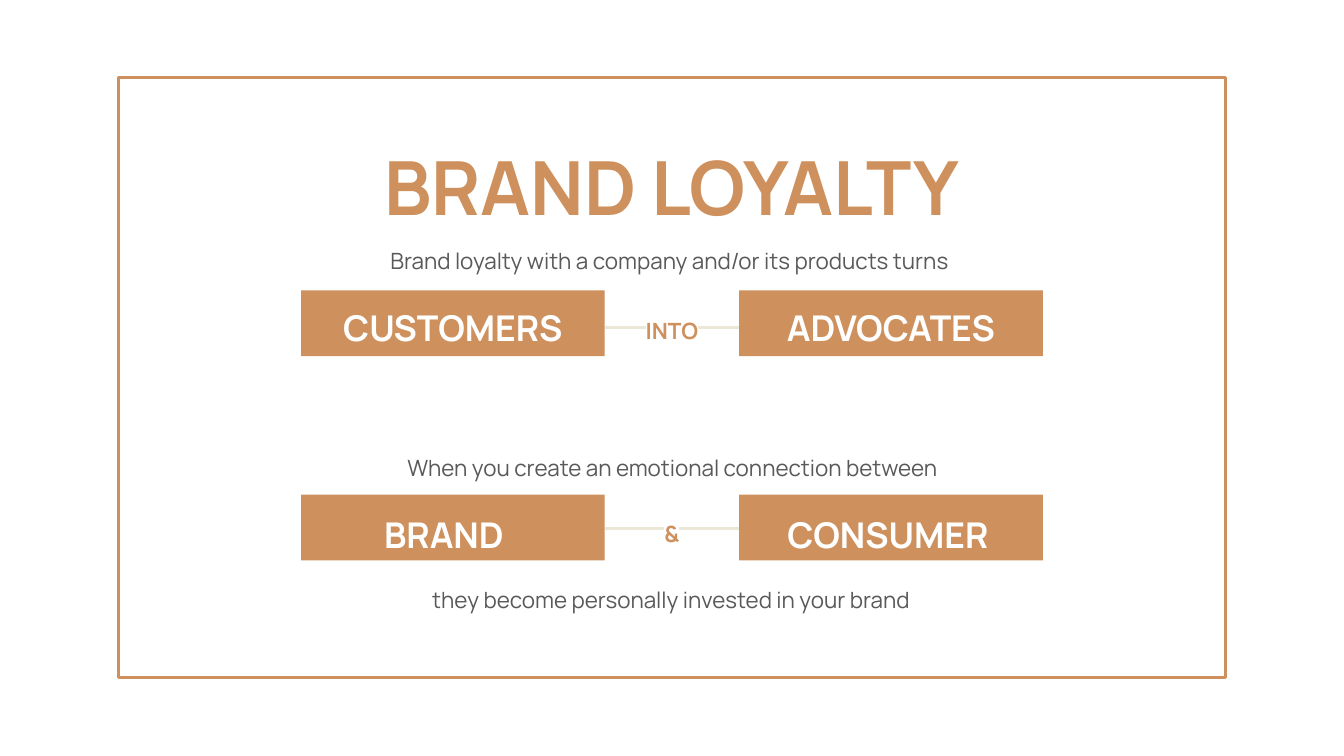
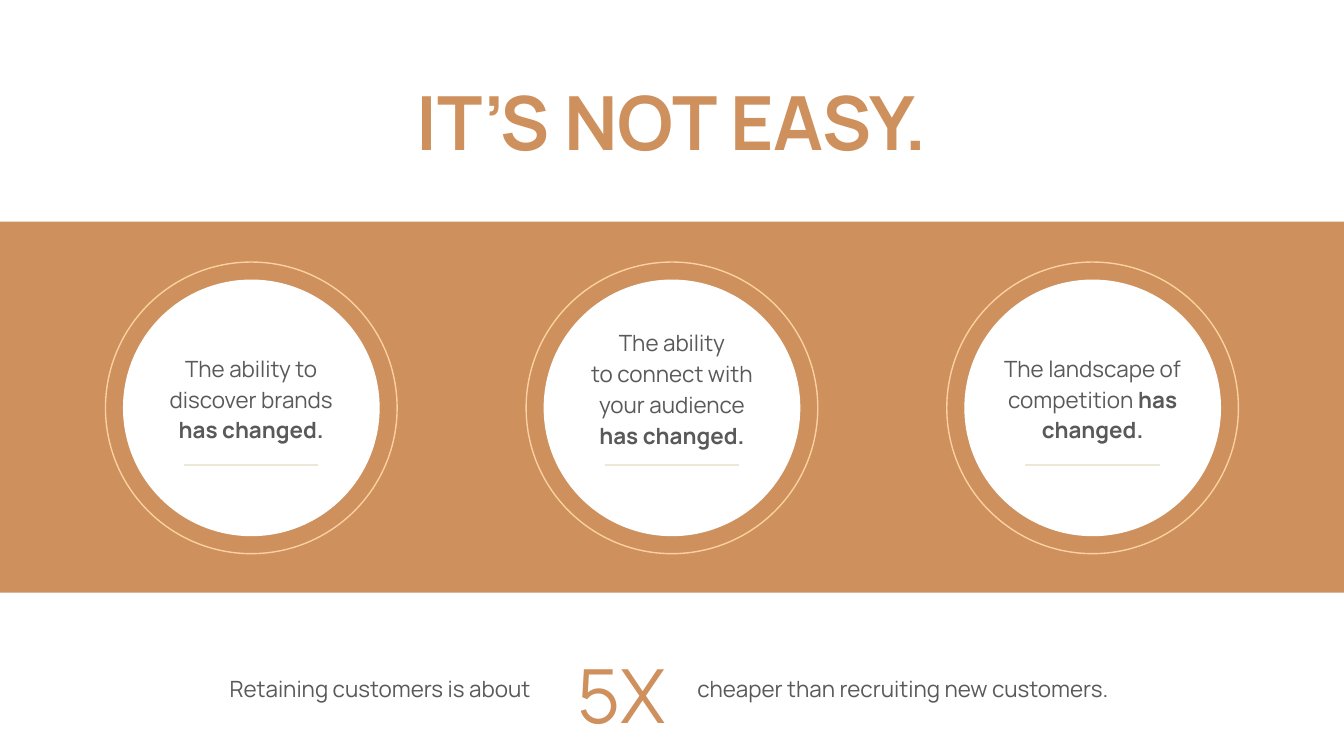
from lxml import etree
from pptx import Presentation
from pptx import util as u
from pptx.dml import color
from pptx.enum import shapes, text
from pptx.oxml import ns

COLUMNS, ROWS = 100, 56.25
COPPER, CREAM, PEACH = "CE905D", "EBE8D8", "FCD1A1"
GREY, WHITE = "595959", "FFFFFF"
LEFT, CENTER = text.PP_ALIGN.LEFT, text.PP_ALIGN.CENTER
RECTANGLE, OVAL = shapes.MSO_SHAPE.RECTANGLE, shapes.MSO_SHAPE.OVAL


def rgb(value):
    return color.RGBColor.from_string(value)


class Board:
    font = "Manrope"

    def __init__(self):
        self.deck = Presentation()
        self.deck.slide_width = u.Inches(10)
        self.deck.slide_height = u.Inches(5.625)
        self.slide = None

    def across(self, columns):
        return round(self.deck.slide_width * columns / COLUMNS)

    def down(self, rows):
        return round(self.deck.slide_height * rows / ROWS)

    def place(self, left, top, width, height):
        return self.across(left), self.down(top), self.across(width), self.down(height)

    def add_slide(self, title, area, spacing):
        self.slide = self.deck.slides.add_slide(self.deck.slide_layouts[5])
        box = self.slide.shapes.title
        box.left, box.top, box.width, box.height = self.place(*area)
        self.fill_text(box, [title], 40, COPPER, True, CENTER, spacing)

    def fill_text(self, box, lines, size, ink, bold, align, spacing):
        frame = box.text_frame
        frame.word_wrap = True
        frame.auto_size = text.MSO_AUTO_SIZE.NONE
        frame.vertical_anchor = text.MSO_ANCHOR.TOP
        frame.margin_left = frame.margin_right = u.Inches(0.1)
        frame.margin_top = frame.margin_bottom = u.Inches(0.1)
        for index, line in enumerate(lines):
            para = frame.add_paragraph() if index else frame.paragraphs[0]
            para.alignment = align
            para.line_spacing = spacing
            para.space_before = u.Pt(0)
            para.font.name = self.font
            para.font.size = u.Pt(size)
            para.font.bold = bold
            para.font.color.rgb = rgb(ink)
            plain, _, strong = line.partition("*")
            if plain:
                para.add_run().text = plain
            if strong:
                span = para.add_run()
                span.text = strong
                span.font.bold = True

    def label(self, area, *lines, size=12, ink=GREY, bold=False, align=CENTER):
        box = self.slide.shapes.add_textbox(*self.place(*area))
        self.fill_text(box, lines, size, ink, bold, align, 1.15)
        return box

    def marked_label(self, area, line):
        box = self.label(area, line, ink=COPPER, bold=True)
        for span in box.text_frame.paragraphs[0].runs:
            mark = etree.SubElement(span.font._element, ns.qn("a:highlight"))
            etree.SubElement(mark, ns.qn("a:srgbClr"), val=WHITE)

    def shape(self, kind, area, fill=None, line=None, weight=1.5):
        shape = self.slide.shapes.add_shape(kind, *self.place(*area))
        shape.shadow.inherit = False
        if fill:
            shape.fill.solid()
            shape.fill.fore_color.rgb = rgb(fill)
        else:
            shape.fill.background()
        if line:
            shape.line.color.rgb = rgb(line)
            shape.line.width = u.Pt(weight)
        else:
            shape.line.fill.background()

    def circle(self, center, middle, size, **style):
        self.shape(OVAL, (center - size / 2, middle - size / 2, size, size), **style)

    def rule(self, center, row, length=10):
        start, end = self.across(center - length / 2), self.across(center + length / 2)
        line = self.slide.shapes.add_connector(
            shapes.MSO_CONNECTOR.STRAIGHT, start, self.down(row), end, self.down(row))
        line.line.color.rgb = rgb(CREAM)
        line.line.width = u.Pt(1.5)
        etree.SubElement(line._element.spPr, ns.qn("a:effectLst"))

    def linked_pair(self, top, rule_row, joint, joint_top):
        for left in (22.4, 55):
            self.shape(RECTANGLE, (left, top, 22.6, 4.9), fill=COPPER)
        self.rule(50, rule_row)
        self.marked_label((46.7, joint_top, 6.6, 3.4), joint)


def loyalty_slide(board):
    board.add_slide("BRAND LOYALTY", (24, 8.5, 52, 9.6), 1.15)
    board.shape(RECTANGLE, (8.8, 5.8, 82.4, 44.6), line=COPPER)
    board.linked_pair(21.6, 24.4, "INTO", 22.3)
    board.linked_pair(36.8, 39.3, "&", 37.4)
    for area, word, align in (
        ((22.4, 21.3, 22.6, 5.3), "CUSTOMERS", CENTER),
        ((55, 21.3, 22.6, 5.3), "ADVOCATES", CENTER),
        ((27.6, 36.7, 12.4, 5.3), "BRAND", LEFT),
        ((57.6, 36.7, 18.4, 5.3), "CONSUMER", LEFT),
    ):
        board.label(area, word, size=19, ink=WHITE, bold=True, align=align)
    board.label((24, 17.1, 52, 3.4), "Brand loyalty with a company and/or its products turns ")
    board.label((22.2, 32.5, 55.7, 3.4), "When you create an emotional connection between")
    board.label((27.8, 42.3, 44.3, 3.4), "they become personally invested in your brand")


def challenge_slide(board):
    board.add_slide("IT’S NOT EASY.", (24, 5.1, 52, 8.4), 0.95)
    board.shape(RECTANGLE, (0, 16.5, COLUMNS, 27.6), fill=COPPER)
    changes = (
        (25.1, 16, ["The ability to discover brands *has changed."]),
        (23.2, 18.7, ["The ability", "to connect with", "your audience", "*has changed."]),
        (25.1, 16, ["The landscape of competition *has changed."]),
    )
    for index, (top, width, lines) in enumerate(changes):
        center = 50 + 31.3 * (index - 1)
        board.circle(center, 30.35, 21.7, line=PEACH, weight=0.75)
        board.circle(center, 30.35, 19.1, fill=WHITE)
        board.label((center - width / 2, top, width, 13.3), *lines)
        board.rule(center, 34.6)
    board.label((16.1, 48.9, 26.7, 3.6), "Retaining customers is about", align=LEFT)
    board.label((42, 46.3, 9.9, 8.8), "5X", size=40, ink=COPPER, align=LEFT)
    board.label((50.9, 48.9, 39.9, 3.6), "cheaper than recruiting new customers.", align=LEFT)


def main():
    board = Board()
    loyalty_slide(board)
    challenge_slide(board)
    board.deck.save("out.pptx")


if __name__ == "__main__":
    main()
